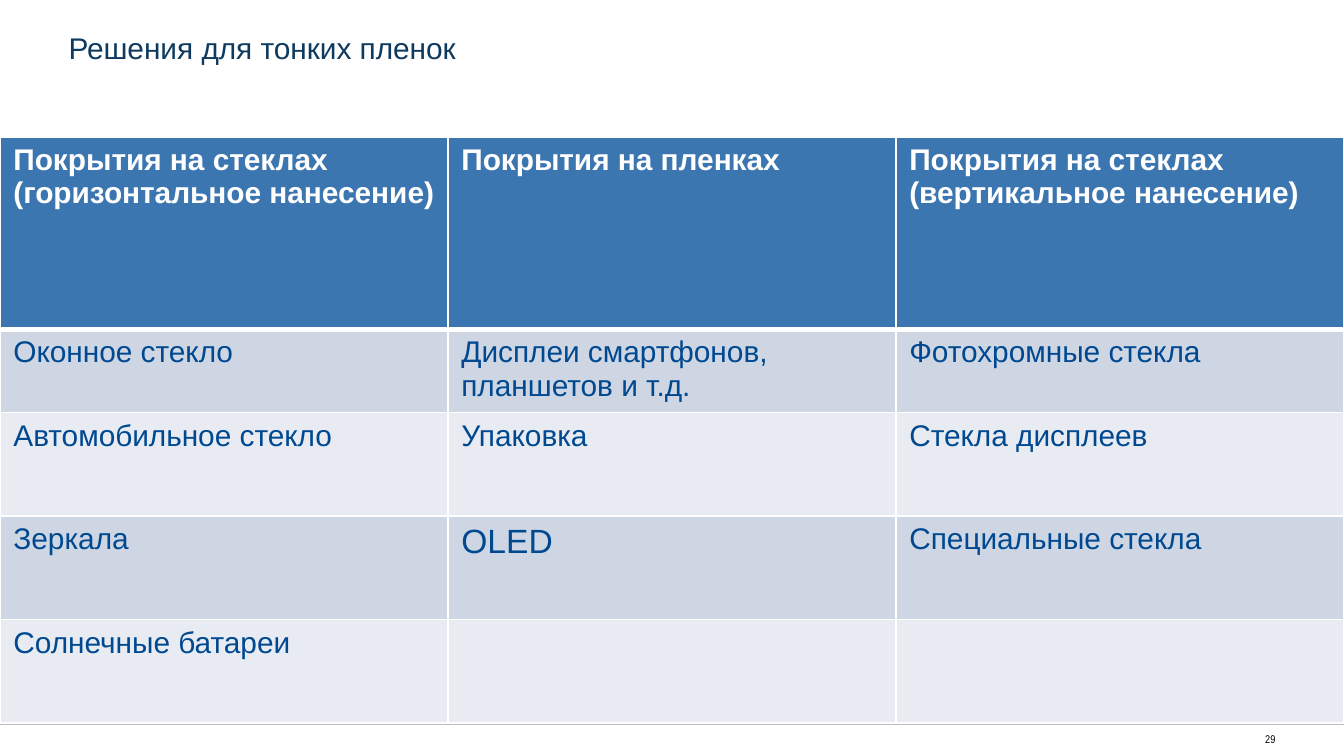
from pptx import Presentation
from pptx.dml.color import RGBColor
from pptx.enum.shapes import MSO_CONNECTOR
from pptx.enum.text import MSO_ANCHOR, MSO_AUTO_SIZE, PP_ALIGN
from pptx.oxml import parse_xml
from pptx.oxml.ns import nsdecls
from pptx.util import Inches, Pt

WHITE = RGBColor(0xFF, 0xFF, 0xFF)
BLACK = RGBColor(0, 0, 0)
GREY = RGBColor(0xC0, 0xC0, 0xC0)
NAVY = RGBColor(0x0E, 0x3A, 0x60)
BLUE = RGBColor(0x00, 0x49, 0x90)
HEAD = RGBColor(0x3B, 0x76, 0xB1)
DARK = RGBColor(0xCE, 0xD6, 0xE4)
LIGHT = RGBColor(0xE8, 0xEC, 0xF2)

ROWS = [
    ["Покрытия на стеклах (горизонтальное нанесение)", "Покрытия на пленках",
     "Покрытия на стеклах (вертикальное нанесение)"],
    ["Оконное стекло", "Дисплеи смартфонов, планшетов и т.д.", "Фотохромные стекла"],
    ["Автомобильное стекло", "Упаковка", "Стекла дисплеев"],
    ["Зеркала", "OLED", "Специальные стекла"],
    ["Солнечные батареи", "", ""],
]
HEIGHTS = [1.43, 0.62, 0.77, 0.77, 0.77]


def style(par, size, color, name="Arial", bold=False):
    font = par.font
    font.name, font.size, font.bold = name, Pt(size), bold
    font.color.rgb = color


def place(shape, left, top, width, height):
    shape.left, shape.top = Inches(left), Inches(top)
    shape.width, shape.height = Inches(width), Inches(height)


def clear(frame):
    frame.margin_left = frame.margin_right = 0
    frame.margin_top = frame.margin_bottom = 0
    frame.word_wrap = True
    frame.auto_size = MSO_AUTO_SIZE.NONE
    frame.vertical_anchor = MSO_ANCHOR.TOP


def add_rule(slide, left, top, width):
    rule = slide.shapes.add_connector(
        MSO_CONNECTOR.STRAIGHT, Inches(left), Inches(top),
        Inches(left + width), Inches(top))
    rule.line.color.rgb = GREY
    rule.line.width = Pt(0.75)
    rule._element.spPr.append(parse_xml(f"<a:effectLst {nsdecls('a')}/>"))


def add_title(slide, left, top, width, height):
    title = slide.shapes.title
    place(title, left, top, width, height)
    clear(title.text_frame)
    par = title.text_frame.paragraphs[0]
    par.text = "Решения для тонких пленок"
    par.alignment = PP_ALIGN.LEFT
    par.line_spacing = 0.9
    style(par, 16, NAVY)


def add_edges(cell, row):
    props = cell._tc.get_or_add_tcPr()
    wide = {("B", 0), ("T", 1)}
    for side in "LRTB":
        width = Pt(3 if (side, row) in wide else 1)
        props.append(parse_xml(
            f'<a:ln{side} {nsdecls("a")} w="{width}"><a:solidFill>'
            f'<a:srgbClr val="{WHITE}"/></a:solidFill></a:ln{side}>'))


def add_grid(slide, left, top, width):
    count = len(ROWS[0])
    frame = slide.shapes.add_table(
        len(ROWS), count, Inches(left), Inches(top),
        Inches(width), Inches(sum(HEIGHTS)))
    table = frame.table
    for col in table.columns:
        col.width = Inches(width / count)
    for i, (texts, height) in enumerate(zip(ROWS, HEIGHTS)):
        table.rows[i].height = Inches(height)
        fill = HEAD if i == 0 else DARK if i % 2 else LIGHT
        for j, text in enumerate(texts):
            cell = table.cell(i, j)
            add_edges(cell, i)
            cell.fill.solid()
            cell.fill.fore_color.rgb = fill
            cell.text = text
            style(cell.text_frame.paragraphs[0], 18 if text == "OLED" else 16,
                  BLUE if i else WHITE, bold=i == 0)


def add_foot(slide, left, top, width, height):
    box = slide.shapes.add_textbox(
        Inches(left), Inches(top), Inches(width), Inches(height))
    clear(box.text_frame)
    par = box.text_frame.paragraphs[0]
    par.text = "29"
    par.alignment = PP_ALIGN.RIGHT
    style(par, 6, BLACK, "Arial Narrow")


def main():
    deck = Presentation()
    deck.slide_width = Inches(10)
    deck.slide_height = deck.slide_width * 9 // 16
    slide = deck.slides.add_slide(deck.slide_layouts[5])
    for top in (1.03, 5.39):
        add_rule(slide, 0, top, 10)
    add_foot(slide, 9.19, 5.45, 0.3, 0.13)
    add_title(slide, 0.51, 0.25, 6.79, 0.77)
    add_grid(slide, 0, 1.02, 10)
    deck.save("out.pptx")


if __name__ == "__main__":
    main()
